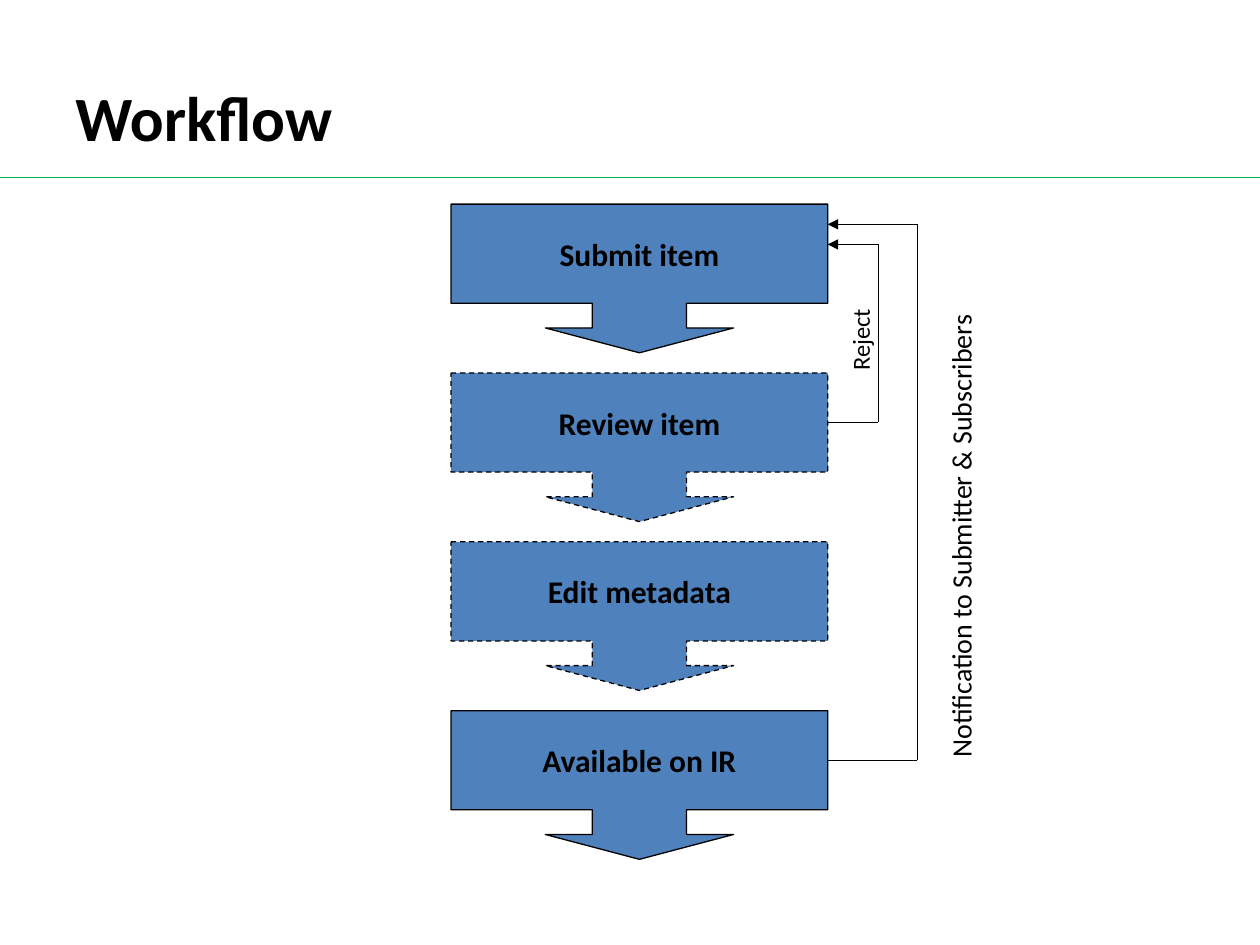
from lxml import etree
from pptx import Presentation
from pptx.dml.color import RGBColor
from pptx.enum.dml import MSO_LINE
from pptx.enum.shapes import MSO_CONNECTOR, MSO_SHAPE
from pptx.enum.text import MSO_ANCHOR, MSO_AUTO_SIZE, PP_ALIGN
from pptx.oxml.ns import qn
from pptx.util import Inches, Pt

BLACK = RGBColor(0x00, 0x00, 0x00)
BLUE = RGBColor(0x4F, 0x81, 0xBD)
GREEN = RGBColor(0x00, 0xB0, 0x50)

STRAIGHT = MSO_CONNECTOR.STRAIGHT
CALLOUT = MSO_SHAPE.DOWN_ARROW_CALLOUT
DASH = MSO_LINE.DASH
MIDDLE = MSO_ANCHOR.MIDDLE
CENTER = PP_ALIGN.CENTER
GROW = MSO_AUTO_SIZE.SHAPE_TO_FIT_TEXT

FONT = "Calibri"
COLS, ROWS = 100, 75
CELL = Inches(0.1)
PITCH, STEP_H = 13.4, 11.8
STEPS = [
    ("Submit item", False),
    ("Review item", True),
    ("Edit metadata", True),
    ("Available on IR", False),
]
LOOPS = [
    (1, 3.2, 4.0, "Reject", 14, (2.55, 9.85, 8.7, 3.3)),
    (3, 1.6, 7.1, "Notification to Submitter & Subscribers", 16,
     (10.55, 22.85, 44.1, 3.7)),
]


def cells(*values):
    return [round(v * CELL) for v in values]


def write(sp, text, size, bold=False):
    p = sp.text_frame.paragraphs[0]
    p.text = text
    p.font.name = FONT
    p.font.size = Pt(size)
    p.font.bold = bold
    p.font.color.rgb = BLACK
    return p


def add_line(s, start, end, color=BLACK, arrow=False):
    line = s.shapes.add_connector(STRAIGHT, *cells(*start, *end))
    line.line.color.rgb = color
    line.line.width = Pt(0.75)
    if arrow:
        etree.SubElement(line.line._get_or_add_ln(), qn("a:tailEnd"), type="triangle")
    etree.SubElement(line._element.spPr, qn("a:effectLst"))


def add_header(s, left, top, width, height):
    sp = s.shapes.add_textbox(*cells(left, top, width, height))
    sp.text_frame.word_wrap = True
    sp.text_frame.vertical_anchor = MIDDLE
    write(sp, "Workflow", 36, True)
    rule = top + height - 1.4
    add_line(s, (0, rule), (COLS, rule), GREEN)


def add_steps(s, left, top, width):
    for i, (text, optional) in enumerate(STEPS):
        sp = s.shapes.add_shape(CALLOUT, *cells(left, top + i * PITCH, width, STEP_H))
        for n, value in enumerate((0.633, 0.633, 0.167, 0.667)):
            sp.adjustments[n] = value
        sp.shadow.inherit = False
        sp.fill.solid()
        sp.fill.fore_color.rgb = BLUE
        sp.line.color.rgb = BLACK
        sp.line.width = Pt(0.75)
        if optional:
            sp.line.dash_style = DASH
        sp.text_frame.word_wrap = False
        sp.text_frame.vertical_anchor = MIDDLE
        write(sp, text, 18, True).alignment = CENTER


def add_loops(s, left, top):
    for step, entry, reach, text, size, (cx, cy, width, height) in LOOPS:
        x = left + reach
        y_in = top + entry
        y_out = top + step * PITCH + STEP_H / 3
        add_line(s, (x, y_in), (left, y_in), arrow=True)
        add_line(s, (x, y_in), (x, y_out))
        add_line(s, (x, y_out), (left, y_out))
        sp = s.shapes.add_textbox(
            *cells(left + cx - width / 2, top + cy - height / 2, width, height))
        sp.rotation = 270
        sp.text_frame.word_wrap = True
        sp.text_frame.auto_size = GROW
        write(sp, text, size)


def main():
    prs = Presentation()
    prs.slide_width, prs.slide_height = cells(COLS, ROWS)
    s = prs.slides.add_slide(prs.slide_layouts[6])
    add_header(s, 5, 3, 90, 12.5)
    add_steps(s, 35.8, 16.2, 29.9)
    add_loops(s, 65.7, 16.2)
    prs.save("out.pptx")


if __name__ == "__main__":
    main()
